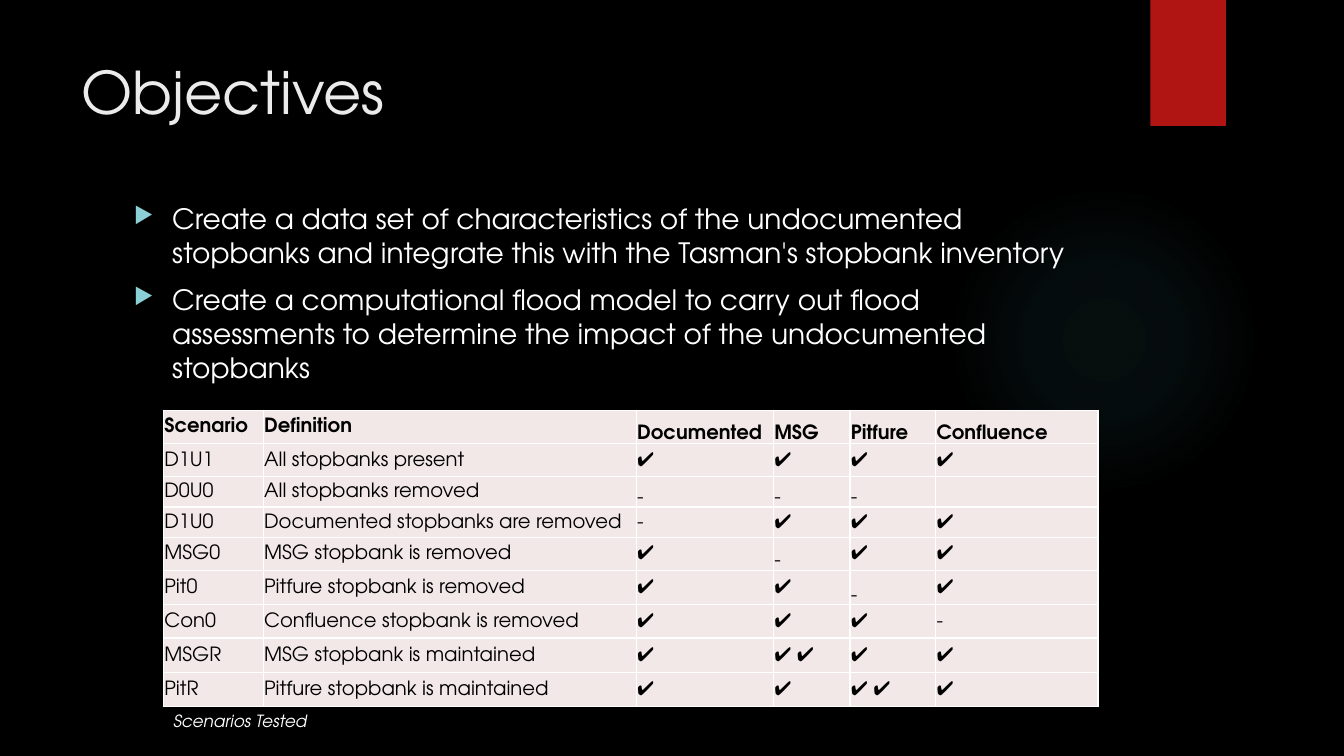
from lxml import etree
from pptx import Presentation
from pptx.dml.color import RGBColor
from pptx.enum.shapes import MSO_SHAPE
from pptx.enum.text import MSO_ANCHOR
from pptx.oxml import parse_xml
from pptx.oxml.ns import nsdecls, qn
from pptx.util import Inches, Pt

OVAL, RECTANGLE = MSO_SHAPE.OVAL, MSO_SHAPE.RECTANGLE
TOP, MIDDLE, BOTTOM = MSO_ANCHOR.TOP, MSO_ANCHOR.MIDDLE, MSO_ANCHOR.BOTTOM
FONT = "TeX Gyre Adventor"
COLORS = {
    "background": "000000", "glow": "50B9C1", "ribbon": "B01513",
    "title": "EBEBEB", "text": "FFFFFF", "bullet": "8AD0D6",
    "cell": "F2E8E7", "cell_text": "000000", "border": "FFFFFF",
}


def format_runs(paragraph, size, color, bold=False, italic=False):
    for run in paragraph.runs:
        run.font.name = FONT
        run.font.size = Pt(size)
        run.font.bold = bold
        run.font.italic = italic
        run.font.color.rgb = RGBColor.from_string(COLORS[color])


def add_text(slide, left, top, width, height, text, size, color, italic=False):
    shape = slide.shapes.add_textbox(Inches(left), Inches(top), Inches(width), Inches(height))
    shape.text_frame.word_wrap = True
    shape.text_frame.vertical_anchor = TOP
    shape.text_frame.text = text
    for paragraph in shape.text_frame.paragraphs:
        format_runs(paragraph, size, color, italic=italic)
    return shape


presentation = Presentation()
presentation.slide_width = Inches(13.33)
presentation.slide_height = Inches(7.5)
slide = presentation.slides.add_slide(presentation.slide_layouts[6])
slide.background.fill.solid()
slide.background.fill.fore_color.rgb = RGBColor.from_string(COLORS["background"])

# Soft glow and ribbon
glow = slide.shapes.add_shape(OVAL, Inches(9.41), Inches(1.83), Inches(3.08), Inches(3.08))
glow.shadow.inherit = False
glow.line.fill.background()
stops = "".join(
    f'<a:gs pos="{position * 1000}"><a:srgbClr val="{COLORS["glow"]}">'
    f'<a:alpha val="{alpha * 1000}"/></a:srgbClr></a:gs>'
    for position, alpha in [(0, 7), (36, 6), (69, 0), (100, 0)]
)
gradient = parse_xml(
    f'<a:gradFill {nsdecls("a")} rotWithShape="1"><a:gsLst>{stops}</a:gsLst>'
    '<a:path path="circle"><a:fillToRect l="50000" t="50000" r="50000" b="50000"/></a:path>'
    '</a:gradFill>'
)
glow.element.spPr.find(qn("a:prstGeom")).addnext(gradient)

ribbon = slide.shapes.add_shape(RECTANGLE, Inches(11.41), 0, Inches(0.75), Inches(1.25))
ribbon.shadow.inherit = False
ribbon.fill.solid()
ribbon.fill.fore_color.rgb = RGBColor.from_string(COLORS["ribbon"])
ribbon.line.fill.background()

# Title
add_text(slide, 0.71, 0.5, 10.29, 1.53, "Objectives", 42, "title")

# Scenario table
ROWS = [
    ["Scenario", "Definition", "Documented", "MSG", "Pitfure", "Confluence"],
    ["D1U1", "All stopbanks present", "✔", "✔", "✔", "✔"],
    ["D0U0", "All stopbanks removed", "-", "-", "-", ""],
    ["D1U0", "Documented stopbanks are removed", "-", "✔", "✔", "✔"],
    ["MSG0", "MSG stopbank is removed", "✔", "-", "✔", "✔"],
    ["Pit0", "Pitfure stopbank is removed", "✔", "✔", "-", "✔"],
    ["Con0", "Confluence stopbank is removed", "✔", "✔", "✔", "-"],
    ["MSGR", "MSG stopbank is maintained", "✔", "✔ ✔", "✔", "✔"],
    ["PitR", "Pitfure stopbank is maintained", "✔", "✔", "✔ ✔", "✔"],
]
COLUMN_WIDTHS = [0.99, 3.7, 1.36, 0.76, 0.85, 1.61]
ROW_HEIGHTS = [0.33, 0.33, 0.3, 0.3, 0.33, 0.34, 0.33, 0.34, 0.34]
BOTTOM_CELLS = {(0, 2), (0, 3), (0, 4), (0, 5), (2, 2), (2, 3), (2, 4), (4, 3), (5, 4)}

table = slide.shapes.add_table(
    len(ROWS), len(COLUMN_WIDTHS), Inches(1.62), Inches(4.07), Inches(9.27), Inches(2.94)
).table
for column, width in zip(table.columns, COLUMN_WIDTHS):
    column.width = Inches(width)
for row, height in zip(table.rows, ROW_HEIGHTS):
    row.height = Inches(height)

for row_index, values in enumerate(ROWS):
    for column_index, value in enumerate(values):
        cell = table.cell(row_index, column_index)
        cell.margin_left = cell.margin_right = cell.margin_top = Inches(0.01)
        cell.margin_bottom = 0
        cell.vertical_anchor = BOTTOM if (row_index, column_index) in BOTTOM_CELLS else MIDDLE
        paragraph = cell.text_frame.paragraphs[0]
        if value:
            paragraph.text = value
            format_runs(paragraph, 14, "cell_text", bold=row_index == 0)
        else:
            etree.SubElement(paragraph._p, qn("a:endParaRPr"), sz="1400")
        properties = cell._tc.get_or_add_tcPr()
        for side in ("lnL", "lnR", "lnT", "lnB"):
            properties.append(parse_xml(
                f'<a:{side} {nsdecls("a")} w="12700"><a:solidFill>'
                f'<a:srgbClr val="{COLORS["border"]}"/></a:solidFill></a:{side}>'
            ))
        cell.fill.solid()
        cell.fill.fore_color.rgb = RGBColor.from_string(COLORS["cell"])

# Objectives with arrow bullets
objectives = add_text(
    slide, 1.23, 1.95, 9.56, 2.12,
    "Create a data set of characteristics of the undocumented stopbanks and integrate this "
    "with the Tasman's stopbank inventory\n"
    "Create a computational flood model to carry out flood assessments to determine the "
    "impact of the undocumented stopbanks",
    20, "text",
)
for index, paragraph in enumerate(objectives.text_frame.paragraphs):
    properties = paragraph._p.get_or_add_pPr()
    properties.set("marL", str(Inches(0.38)))
    properties.set("indent", str(Inches(-0.38)))
    color = etree.SubElement(properties, qn("a:buClr"))
    etree.SubElement(color, qn("a:srgbClr"), val=COLORS["bullet"])
    etree.SubElement(properties, qn("a:buSzPct"), val="80000")
    etree.SubElement(properties, qn("a:buChar"), char="▶")
    paragraph.space_before = Pt(10 if index else 0)

# Table caption
add_text(slide, 1.62, 7, 2.95, 0.3, "Scenarios Tested", 12, "text", italic=True)

presentation.save("out.pptx")
